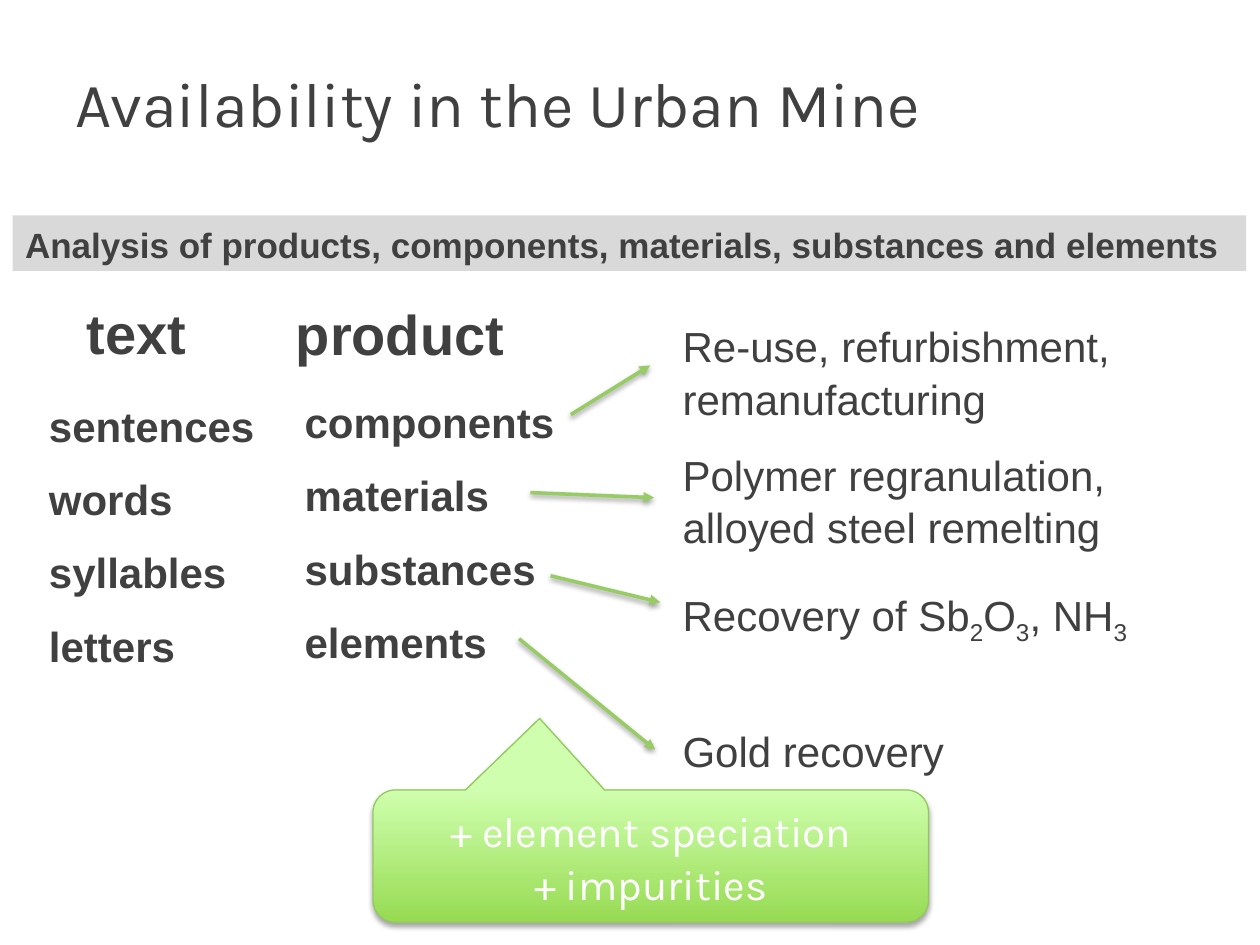
from dataclasses import dataclass

import lxml.etree
import pptx
import pptx.dml.color
import pptx.enum.dml
import pptx.enum.shapes
import pptx.enum.text
import pptx.oxml.ns
import pptx.util

Pt = pptx.util.Pt
RGB = pptx.dml.color.RGBColor
Shape = pptx.enum.shapes.MSO_SHAPE
Align = pptx.enum.text.PP_ALIGN
Anchor = pptx.enum.text.MSO_ANCHOR
qn = pptx.oxml.ns.qn

INK = RGB(0x40, 0x40, 0x40)
WHITE = RGB(0xFF, 0xFF, 0xFF)
GREY = RGB(0xD9, 0xD9, 0xD9)
ARROW = RGB(0x97, 0xCB, 0x63)
EDGE = RGB(0x94, 0xC9, 0x5E)
DEEP = RGB(0x97, 0xDB, 0x53)
PALE = RGB(0xCF, 0xFF, 0xAE)

LEAD = 1.04
RIGHT = 383


@dataclass
class Label:
    text: str
    left: float
    top: float
    width: float
    height: float
    size: float = 24
    bold: bool = False
    gap: float = 0
    wrap: bool = True


@dataclass
class Arrow:
    x1: float
    y1: float
    x2: float
    y2: float


LABELS = [
    Label("text", 42.5, 165.6, 80.6, 46, size=32, bold=True, wrap=False),
    Label("product", 162, 166.3, 134.6, 46, size=32, bold=True, wrap=False),
    Label("sentences\nwords\nsyllables\nletters", 20.9, 223.9, 317.5, 201, bold=True, gap=6),
    Label("components\nmaterials\nsubstances\nelements", 167, 221.8, 317.5, 201, bold=True, gap=6),
    Label("Re-use, refurbishment, remanufacturing", RIGHT, 178.6, 328.3, 65.5),
    Label("Polymer regranulation, alloyed steel remelting", RIGHT, 252, 328.3, 65.5),
    Label("Gold recovery", RIGHT, 409.7, 165.6, 36, wrap=False),
]

FORMULA = Label("", RIGHT, 331.9, 274.3, 36, wrap=False)
PARTS = [("Recovery of Sb", False), ("2", True), ("O", False),
         ("3", True), (", NH", False), ("3", True)]

ARROWS = [
    Arrow(326.2, 236.9, 371.5, 208.8),
    Arrow(303.1, 281.5, 373.7, 284.4),
    Arrow(314.6, 329, 377.3, 344.2),
    Arrow(296.6, 365, 374.4, 428.4),
]


def style(frame, size: float, color=INK, font: str = "Arial",
          bold: bool = False, align=Align.LEFT, gap: float = 0) -> None:
    for i, para in enumerate(frame.paragraphs):
        para.alignment = align
        para.line_spacing = LEAD
        para.space_before = Pt(gap if i else 0)
        para.space_after = Pt(gap)
        for run in para.runs:
            run.font.name = font
            run.font.size = Pt(size)
            run.font.bold = bold
            run.font.color.rgb = color


def shade(props, alpha: int, blur: float, drop: float) -> None:
    """Give shape properties a soft black shadow that falls straight down."""
    for old in props.findall(qn("a:effectLst")):
        props.remove(old)
    effects = lxml.etree.SubElement(props, qn("a:effectLst"))
    outer = lxml.etree.SubElement(
        effects, qn("a:outerShdw"), blurRad=str(int(Pt(blur))),
        dist=str(int(Pt(drop))), dir="5400000", rotWithShape="0")
    black = lxml.etree.SubElement(outer, qn("a:srgbClr"), val="000000")
    lxml.etree.SubElement(black, qn("a:alpha"), val=str(alpha * 1000))


def add_label(slide, label: Label):
    box = slide.shapes.add_textbox(
        Pt(label.left), Pt(label.top), Pt(label.width), Pt(label.height))
    frame = box.text_frame
    frame.word_wrap = label.wrap
    frame.text = label.text
    style(frame, label.size, bold=label.bold, gap=label.gap)
    return frame


def add_formula(slide) -> None:
    frame = add_label(slide, FORMULA)
    para = frame.paragraphs[0]
    for text, low in PARTS:
        run = para.add_run()
        run.text = text
        if low:
            run._r.get_or_add_rPr().set("baseline", "-25000")
    style(frame, FORMULA.size)


def add_arrow(slide, arrow: Arrow) -> None:
    line = slide.shapes.add_connector(
        pptx.enum.shapes.MSO_CONNECTOR.STRAIGHT,
        Pt(arrow.x1), Pt(arrow.y1), Pt(arrow.x2), Pt(arrow.y2))
    line.line.color.rgb = ARROW
    line.line.width = Pt(2)
    lxml.etree.SubElement(line.line._get_or_add_ln(), qn("a:tailEnd"), type="triangle")
    shade(line._element.spPr, 38, 3.1, 1.6)


def add_title(slide) -> None:
    title = slide.shapes.title
    title.left, title.top = Pt(36), Pt(21.6)
    title.width, title.height = Pt(648), Pt(72)
    frame = title.text_frame
    frame.text = "Availability in the Urban Mine"
    frame.vertical_anchor = Anchor.MIDDLE
    style(frame, 36, font="Karla")


def add_bar(slide) -> None:
    bar = slide.shapes.add_shape(
        Shape.RECTANGLE, Pt(7.2), Pt(123.1), Pt(704.9), Pt(31.7))
    bar.shadow.inherit = False
    bar.fill.solid()
    bar.fill.fore_color.rgb = GREY
    bar.line.fill.background()
    frame = bar.text_frame
    frame.word_wrap = True
    frame.vertical_anchor = Anchor.TOP
    frame.text = "Analysis of products, components, materials, substances and elements"
    style(frame, 20, bold=True)


def add_callout(slide) -> None:
    call = slide.shapes.add_shape(
        Shape.ROUNDED_RECTANGULAR_CALLOUT, Pt(213.1), Pt(451.4), Pt(317.5), Pt(75.6))
    for i, value in enumerate((-0.2, -1.04, 0.17)):
        call.adjustments[i] = value
    call.fill.gradient()
    call.fill.gradient_angle = 90
    for stop, color, place in zip(call.fill.gradient_stops, (DEEP, PALE), (0, 1)):
        stop.color.rgb = color
        stop.position = place
    call.line.color.rgb = EDGE
    call.line.width = Pt(0.75)
    call.shadow.inherit = False
    shade(call._element.spPr, 35, 3.1, 1.8)
    frame = call.text_frame
    frame.word_wrap = True
    frame.vertical_anchor = Anchor.MIDDLE
    frame.text = "+ element speciation\n+ impurities"
    style(frame, 24, color=WHITE, font="Karla", align=Align.CENTER)


def main() -> None:
    deck = pptx.Presentation()
    deck.slide_width, deck.slide_height = Pt(720), Pt(540)
    slide = deck.slides.add_slide(deck.slide_layouts[5])
    add_title(slide)
    add_bar(slide)
    for label in LABELS:
        add_label(slide, label)
    add_formula(slide)
    for arrow in ARROWS:
        add_arrow(slide, arrow)
    add_callout(slide)
    deck.save("out.pptx")


if __name__ == "__main__":
    main()
